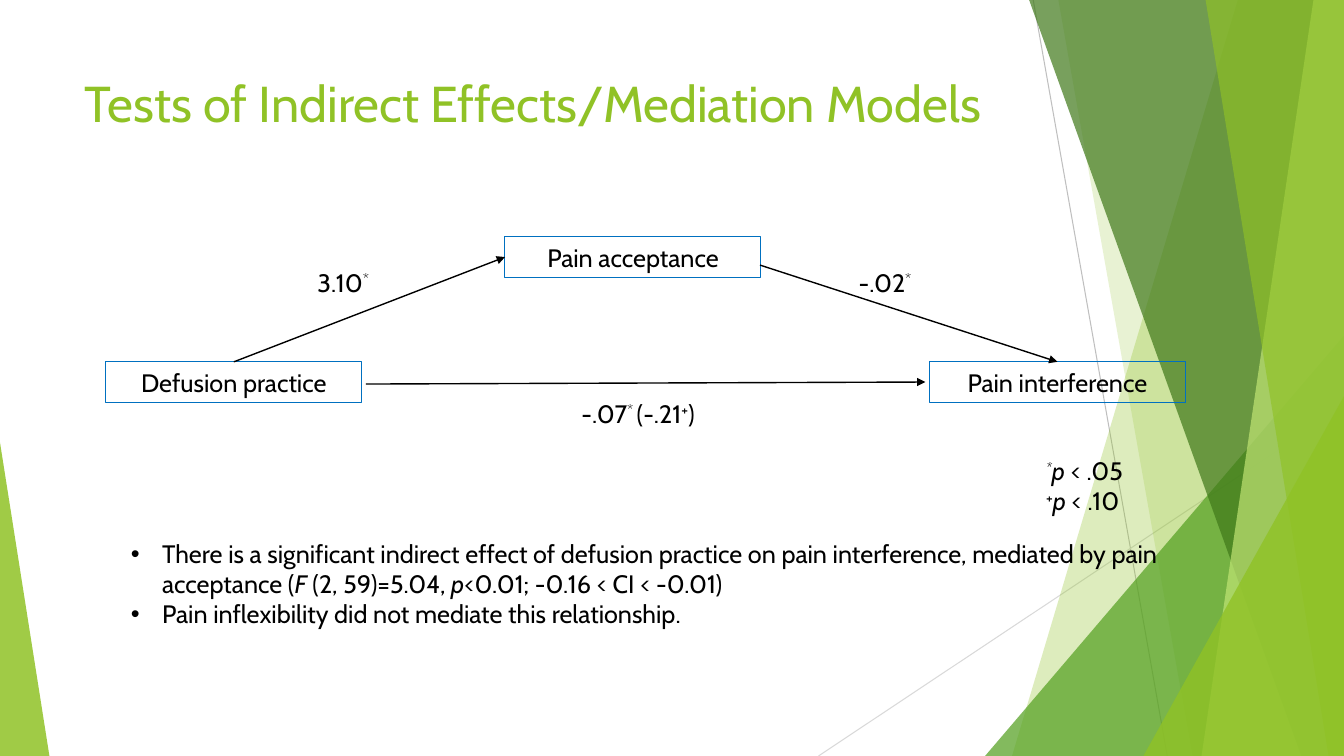
from dataclasses import dataclass

from lxml import etree
from pptx import Presentation
from pptx.dml.color import RGBColor
from pptx.enum.shapes import MSO_CONNECTOR, MSO_SHAPE
from pptx.enum.text import MSO_ANCHOR, MSO_AUTO_SIZE, PP_ALIGN
from pptx.oxml.ns import qn
from pptx.util import Inches, Pt

STRAIGHT = MSO_CONNECTOR.STRAIGHT
RECTANGLE, TRIANGLE = MSO_SHAPE.RECTANGLE, MSO_SHAPE.ISOSCELES_TRIANGLE
LEFT, CENTER = PP_ALIGN.LEFT, PP_ALIGN.CENTER
TOP, MIDDLE = MSO_ANCHOR.TOP, MSO_ANCHOR.MIDDLE
FIXED_SIZE = MSO_AUTO_SIZE.NONE
TOP_SIDE, LEFT_SIDE = 0, 1
CELL = Inches(0.1)  # one column or row of the slide grid


@dataclass(frozen=True)
class Theme:
    font: str = "Cabin"
    title_size: int = 36
    body_size: int = 18
    ink: str = "000000"
    green: str = "90C226"
    leaf: str = "54A021"
    forest: str = "3F7819"
    lime: str = "C0E474"
    node_line: str = "0070C0"
    ray_dark: str = "BFBFBF"
    ray_light: str = "D9D9D9"


THEME = Theme()


@dataclass(frozen=True)
class Box:
    """A region of the slide, in grid columns and rows."""
    left: float
    top: float
    width: float
    height: float

    def point(self, column, row):
        return round((self.left + column) * CELL), round((self.top + row) * CELL)

    def area(self, column, row, width, height):
        return Box(self.left + column, self.top + row, width, height)

    def frame(self):
        return (*self.point(0, 0), round(self.width * CELL), round(self.height * CELL))


SLIDE = Box(0, 0, 133.33, 75)
TITLE = Box(7.4, 6.7, 100.4, 14.4)
DIAGRAM = Box(10.5, 23.5, 107.1, 28.3)
FINDINGS = Box(12, 52.9, 108, 10.1)


def color(code):
    return RGBColor.from_string(code)


def write(frame, paragraphs, size=THEME.body_size, ink=THEME.ink, align=LEFT, anchor=TOP):
    """Each paragraph lists (text, style): i is italic, ^ is superscript."""
    frame.word_wrap = True
    frame.auto_size = FIXED_SIZE
    frame.vertical_anchor = anchor
    for index, spans in enumerate(paragraphs):
        para = frame.add_paragraph() if index else frame.paragraphs[0]
        para.alignment = align
        for text, style in spans:
            span = para.add_run()
            span.text = text
            span.font.name, span.font.size = THEME.font, Pt(size)
            span.font.color.rgb = color(ink)
            span.font.italic = "i" in style
            if "^" in style:
                span._r.get_or_add_rPr().set("baseline", "30000")


def add_text(page, box, paragraphs):
    frame = page.shapes.add_textbox(*box.frame()).text_frame
    write(frame, paragraphs)
    return frame


def add_line(page, start, end, ink, width, arrow=False):
    line = page.shapes.add_connector(STRAIGHT, *start, *end)
    line.line.color.rgb = color(ink)
    line.line.width = Pt(width)
    properties = line._element.spPr
    if arrow:
        etree.SubElement(properties.find(qn("a:ln")), qn("a:tailEnd"), type="triangle")
    etree.SubElement(properties, qn("a:effectLst"))
    return line


def tint(shape, code, opacity):
    shape.shadow.inherit = False
    shape.fill.solid()
    shape.fill.fore_color.rgb = color(code)
    shape.line.fill.background()
    fill = shape._element.spPr.find(qn("a:solidFill")).find(qn("a:srgbClr"))
    etree.SubElement(fill, qn("a:alpha"), val=str(opacity * 1000))


def add_band(page, box, top, bottom, code, opacity):
    """A band from a slanted left edge to the right edge of the box."""
    outline = page.shapes.build_freeform(*box.point(top, 0))
    corners = [(box.width, 0), (box.width, box.height), (bottom, box.height)]
    outline.add_line_segments([box.point(*corner) for corner in corners], close=True)
    tint(outline.convert_to_shape(), code, opacity)


def add_wedge(page, box, width, height, apex, code, opacity):
    """A triangle in the bottom corner: apex 0 is at the left, 1 at the right."""
    corner = box.area(apex * (box.width - width), box.height - height, width, height)
    wedge = page.shapes.add_shape(TRIANGLE, *corner.frame())
    wedge.adjustments[0] = apex
    tint(wedge, code, opacity)


def add_backdrop(page, box):
    # Thin rays
    add_line(page, box.point(102.5, 0), box.point(115.8, box.height), THEME.ray_dark, 0.75)
    add_line(page, box.point(box.width, 40.3), box.point(81.2, box.height), THEME.ray_light, 0.75)
    # Translucent facets, back to front
    add_band(page, box, 122.8, 100.4, THEME.green, 30)
    add_band(page, box, 105, 118.3, THEME.green, 20)
    add_wedge(page, box, 35.6, 41.7, 1, THEME.leaf, 72)
    add_band(page, box, 102.1, 129.1, THEME.forest, 70)
    add_band(page, box, 130.3, 119.2, THEME.lime, 70)
    add_band(page, box, 119.6, 131.8, THEME.green, 65)
    add_wedge(page, box, 19.9, 35.7, 1, THEME.green, 80)
    add_wedge(page, box, 4.9, 31.1, 0, THEME.green, 85)


def add_title(page, box, text):
    title = page.shapes.title
    title.left, title.top, title.width, title.height = box.frame()
    write(title.text_frame, [[(text, "")]], THEME.title_size, THEME.green)


def add_node(page, box, text):
    node = page.shapes.add_shape(RECTANGLE, *box.frame())
    node.shadow.inherit = False
    node.fill.background()
    node.line.color.rgb = color(THEME.node_line)
    node.line.width = Pt(0.75)
    write(node.text_frame, [[(text, "")]], align=CENTER, anchor=MIDDLE)
    return node


def add_mediation_model(page, box):
    # Variables
    width, height, base, middle = 25.4, 4, 12.4, 39.6
    last = box.width - width
    practice = add_node(page, box.area(0, base, width, height), "Defusion practice")
    interference = add_node(page, box.area(last, base, width, height), "Pain interference")
    acceptance = add_node(page, box.area(middle, 0, width, height), "Pain acceptance")

    # Paths between them
    def path_arrow(start, end):
        return add_line(page, box.point(*start), box.point(*end), THEME.ink, 1, arrow=True)

    to_mediator = path_arrow((width / 2, base), (middle, height / 2))
    to_mediator.begin_connect(practice, TOP_SIDE)
    to_mediator.end_connect(acceptance, LEFT_SIDE)
    path_arrow((25.8, 14.6), (81.3, 14.4))
    to_outcome = path_arrow((64.9, 2.8), (last + width / 2, base))
    to_outcome.end_connect(interference, TOP_SIDE)

    # Coefficients
    add_text(page, box.area(20, 2.5, 10.7, 4), [[("3.10", ""), ("*", "^")]])
    add_text(page, box.area(73.7, 2.5, 10.7, 4), [[("-.02", ""), ("*", "^")]])
    add_text(page, box.area(46.2, 15.5, 18.7, 4),
             [[("-.07", ""), ("* ", "^"), ("(-.21", ""), ("+", "^"), (")", "")]])

    # Significance key
    add_text(page, box.area(92.3, 21.2, 18.7, 7.1),
             [[("*", "i^"), ("p ", "i"), ("< .05", "")],
              [("+", "^"), ("p ", "i"), ("< .10", "")]])


def add_findings(page, box):
    frame = add_text(page, box, [
        [("There is a significant indirect effect of defusion practice on pain "
          "interference, mediated by pain acceptance (", ""), ("F ", "i"),
         ("(2, 59)=5.04, ", ""), ("p", "i"), ("<0.01; -0.16 < CI < -0.01)", "")],
        [("Pain inflexibility did not mediate this relationship.", "")]])
    indent = Inches(0.31)
    for para in frame.paragraphs:
        properties = para._p.get_or_add_pPr()
        properties.set("marL", str(indent))
        properties.set("indent", str(-indent))
        etree.SubElement(properties, qn("a:buFont"), typeface="Arial")
        etree.SubElement(properties, qn("a:buChar"), char="•")


def main():
    deck = Presentation()
    deck.slide_width, deck.slide_height = SLIDE.frame()[2:]
    page = deck.slides.add_slide(deck.slide_layouts[5])
    add_backdrop(page, SLIDE)
    add_title(page, TITLE, "Tests of Indirect Effects/Mediation Models")
    add_mediation_model(page, DIAGRAM)
    add_findings(page, FINDINGS)
    deck.save("out.pptx")


if __name__ == "__main__":
    main()
